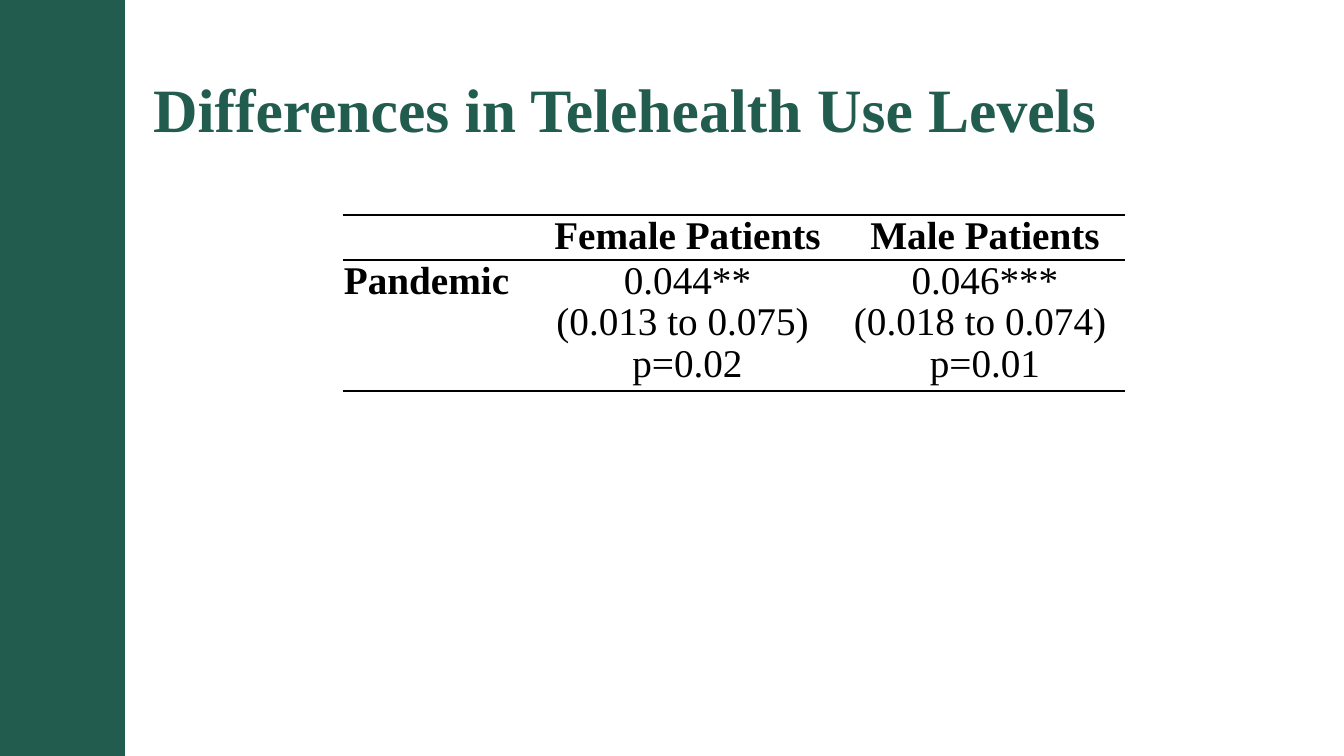
import pptx
import pptx.dml.color
import pptx.enum.shapes
import pptx.enum.text
import pptx.oxml
import pptx.oxml.ns
import pptx.util

GREEN = pptx.dml.color.RGBColor(0x21, 0x5C, 0x4F)
BLACK = pptx.dml.color.RGBColor(0, 0, 0)
FONT = "Times New Roman"
TITLE = "Differences in Telehealth Use Levels"
ROWS = [
    [[], ["Female Patients"], ["Male Patients"]],
    [
        ["Pandemic"],
        ["0.044**", "(0.013 to 0.075) ", "p=0.02"],
        ["0.046***", "(0.018 to 0.074) ", "p=0.01"],
    ],
]
COLUMN_WIDTHS = [187, 315, 280]
ROW_HEIGHTS = [45, 131]
RULES = [{"lnT": 1.5, "lnB": 1}, {"lnT": 1, "lnB": 1}]
NO_STYLE = "{2D5ABB26-0587-4C30-8999-92F81FD0307C}"
TITLE_FORMAT = {"name": FONT, "size": pptx.util.Pt(44), "bold": True}
CELL_FORMAT = {"name": FONT, "size": pptx.util.Pt(28)}
CELL_MARGINS = {"margin_left": 1, "margin_right": 1, "margin_top": 1, "margin_bottom": 0}


def px(length):
    return pptx.util.Emu(round(length * 914400 / 100.8))


def format_font(font, values, color):
    for name, value in values.items():
        setattr(font, name, value)
    font.color.rgb = color


def add_rules(cell, rules):
    properties = cell._tc.get_or_add_tcPr()
    for tag, points in rules.items():
        properties.append(pptx.oxml.parse_xml(
            f'<a:{tag} {pptx.oxml.ns.nsdecls("a")} w="{pptx.util.Pt(points)}">'
            f'<a:solidFill><a:srgbClr val="{BLACK}"/></a:solidFill></a:{tag}>'
        ))


def add_sidebar(slide):
    sidebar = slide.shapes.add_shape(
        pptx.enum.shapes.MSO_SHAPE.RECTANGLE, 0, 0, px(125), px(756))
    sidebar.shadow.inherit = False
    sidebar.fill.solid()
    sidebar.fill.fore_color.rgb = GREEN
    sidebar.line.fill.background()


def fill_title(title):
    place = {"left": 143, "top": 40, "width": 1072, "height": 146}
    for name, value in place.items():
        setattr(title, name, px(value))
    title.text_frame.text = TITLE
    title.text_frame.vertical_anchor = pptx.enum.text.MSO_ANCHOR.MIDDLE
    paragraph = title.text_frame.paragraphs[0]
    paragraph.alignment = pptx.enum.text.PP_ALIGN.LEFT
    paragraph.line_spacing = 0.9
    format_font(paragraph.font, TITLE_FORMAT, GREEN)


def fill_cell(cell, lines, row, column):
    for name, value in CELL_MARGINS.items():
        setattr(cell, name, px(value))
    add_rules(cell, RULES[row])
    cell.fill.background()
    cell.text = "\n".join(lines)
    align = pptx.enum.text.PP_ALIGN
    for paragraph in cell.text_frame.paragraphs:
        paragraph.alignment = align.CENTER if column else align.LEFT
        paragraph.line_spacing = 0.96
        format_font(paragraph.font, CELL_FORMAT, BLACK)
        paragraph.font.bold = row == 0 or column == 0


def add_results(slide):
    frame = slide.shapes.add_table(
        len(ROWS), len(COLUMN_WIDTHS), px(343), px(215),
        px(sum(COLUMN_WIDTHS)), px(sum(ROW_HEIGHTS)))
    table = frame.table
    table.first_row = table.horz_banding = False
    table._tbl.tblPr.find(pptx.oxml.ns.qn("a:tableStyleId")).text = NO_STYLE
    for column, width in zip(table.columns, COLUMN_WIDTHS):
        column.width = px(width)
    for row, height in zip(table.rows, ROW_HEIGHTS):
        row.height = px(height)
    for row, cells in enumerate(ROWS):
        for column, lines in enumerate(cells):
            fill_cell(table.cell(row, column), lines, row, column)


def main():
    presentation = pptx.Presentation()
    presentation.slide_width = px(1344)
    presentation.slide_height = px(756)
    slide = presentation.slides.add_slide(presentation.slide_layouts[5])
    add_sidebar(slide)
    fill_title(slide.shapes.title)
    add_results(slide)
    presentation.save("out.pptx")


if __name__ == "__main__":
    main()
